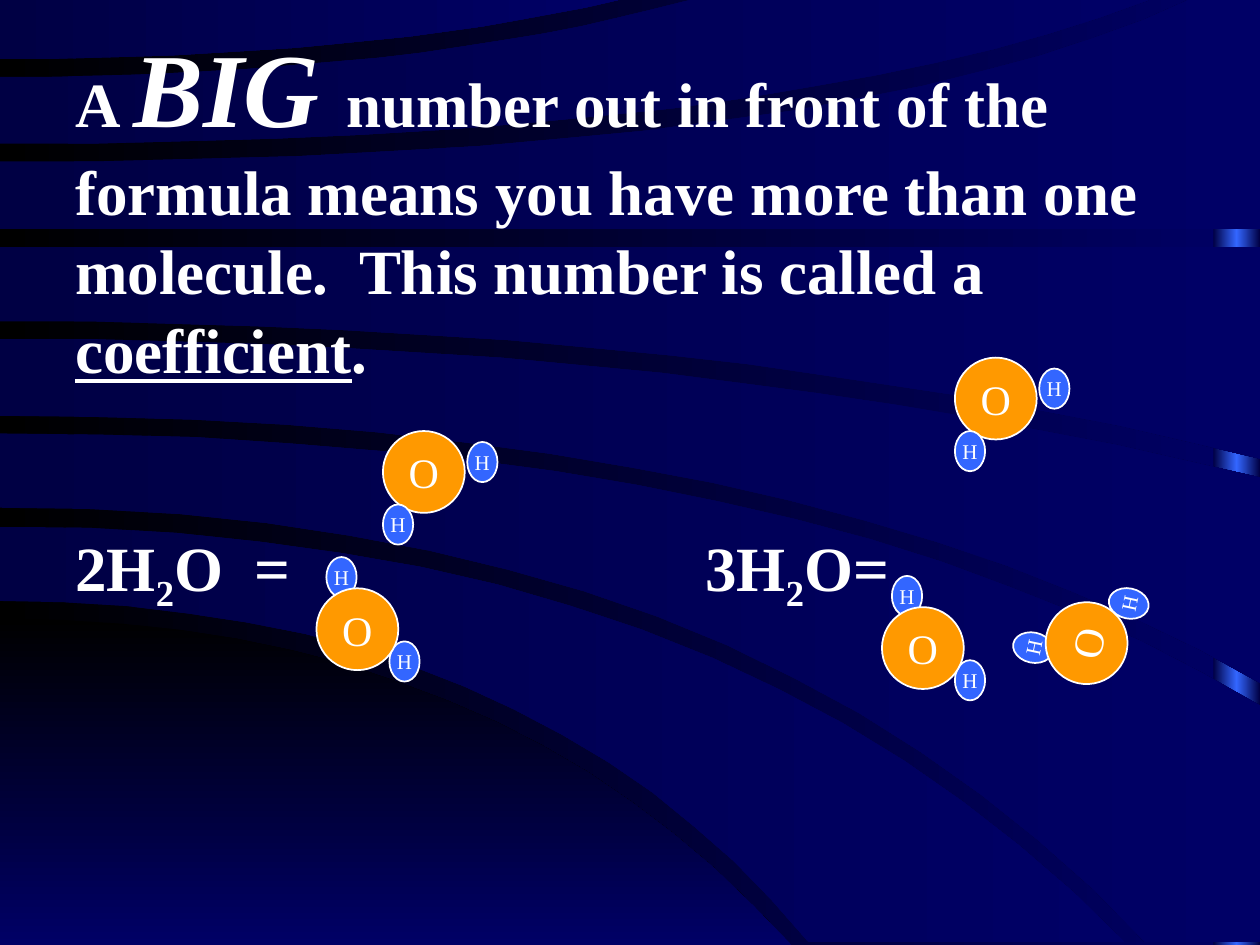
from copy import deepcopy
from dataclasses import dataclass

from pptx import Presentation
from pptx.dml.color import RGBColor
from pptx.enum.shapes import MSO_SHAPE
from pptx.enum.text import MSO_ANCHOR, PP_ALIGN
from pptx.oxml.ns import qn
from pptx.oxml.xmlchemy import OxmlElement
from pptx.util import Cm, Pt

RECTANGLE, OVAL = MSO_SHAPE.RECTANGLE, MSO_SHAPE.OVAL
MIDDLE, CENTER = MSO_ANCHOR.MIDDLE, PP_ALIGN.CENTER
FONT = "Times New Roman"
COLORS = {
    "black": "000000", "navy": "000066", "dark navy": "000044",
    "blue": "3366FF", "orange": "FF9900", "white": "FFFFFF",
}
GRID = Cm(2.54) / 100  # unit of the band outlines
CURVE_STEPS = 16
OXYGEN_SIZE = (1.65, 1.65)
HYDROGEN_SIZE = (0.61, 0.81)


@dataclass
class Edge:
    """A curve that leaves the left side horizontally and bends to its end."""
    start_y: int
    bend_x: int
    end_x: int
    end_y: int

    def points(self) -> list[tuple[float, float]]:
        steps = [step / CURVE_STEPS for step in range(CURVE_STEPS + 1)]
        return [(2 * t * (1 - t) * self.bend_x + t * t * self.end_x,
                 self.start_y + t * t * (self.end_y - self.start_y)) for t in steps]


@dataclass
class Band:
    upper: Edge
    lower: Edge
    colors: tuple[str, ...] = ("dark navy", "navy")
    angle: int = 0


@dataclass
class Molecule:
    left: float
    top: float
    hydrogens: tuple[tuple[float, float], ...]  # offsets from the oxygen
    oxygen_first: bool = False
    rotation: int = 0


# Background bands, from the bottom corner upwards
BANDS = [
    Band(Edge(491, 396, 628, 750), Edge(750, 314, 628, 750), ("black", "navy"), 270),
    Band(Edge(418, 574, 893, 748), Edge(477, 417, 642, 748)),
    Band(Edge(344, 640, 1000, 560), Edge(403, 587, 909, 748)),
    Band(Edge(269, 550, 1000, 379), Edge(330, 630, 1000, 542)),
    Band(Edge(196, 500, 1000, 196), Edge(255, 564, 1000, 364)),
    Band(Edge(128, 669, 943, 0), Edge(182, 500, 1000, 182)),
    Band(Edge(61, 326, 548, 0), Edge(114, 612, 912, 0)),
    Band(Edge(0, 246, 491, 0), Edge(47, 284, 491, 0)),
]
RIGHT_BEND = ((0, 1.48), (1.7, 0.22))
LEFT_BEND = ((0.2, -0.63), (1.47, 1.07))
TURNED_BEND = ((-0.56, 0.51), (1.37, -0.38))
MOLECULES = [
    Molecule(7.72, 8.69, RIGHT_BEND, oxygen_first=True),
    Molecule(6.38, 11.86, LEFT_BEND),
    Molecule(19.25, 7.21, RIGHT_BEND, oxygen_first=True),
    Molecule(17.78, 12.24, LEFT_BEND),
    Molecule(21.08, 12.14, TURNED_BEND, rotation=282),
]


def rgb(name: str) -> RGBColor:
    return RGBColor.from_string(COLORS[name])


def set_gradient(fill, colors: tuple[str, ...], angle: int = 0) -> None:
    """Spread the colours evenly over the stops of a gradient fill."""
    fill.gradient_angle = angle
    for index, (stop, color) in enumerate(zip(fill.gradient_stops, colors)):
        stop.color.rgb = rgb(color)
        stop.position = index / (len(colors) - 1)


def add_text(paragraph, text: str, *, size: int = 36, bold: bool = False, italic: bool = False,
             underline: bool = False, baseline: int = 0) -> None:
    run = paragraph.add_run()
    run.text = text
    font = run.font
    font.name, font.size, font.color.rgb = FONT, Pt(size), rgb("white")
    font.bold, font.italic, font.underline = bold, italic, underline
    if baseline:
        run._r.get_or_add_rPr().set("baseline", str(baseline * 1000))


def draw_side_bar(slide) -> None:
    shape = slide.shapes.add_shape(RECTANGLE, Cm(24.46), 0, Cm(0.94), Cm(19.05))
    shape.shadow.inherit = False
    shape.line.fill.background()
    shape.fill.gradient()
    stops = shape._element.spPr.find(".//" + qn("a:gsLst"))
    stops.append(deepcopy(stops[-1]))  # third stop
    set_gradient(shape.fill, ("dark navy", "blue", "dark navy"))


def draw_band(slide, band: Band) -> None:
    shorter, longer = sorted((band.upper, band.lower), key=lambda edge: edge.end_x)
    corner = (longer.end_x, shorter.end_y)
    outline = [*band.upper.points(), corner, *reversed(band.lower.points())]
    builder = slide.shapes.build_freeform(*outline[0], scale=GRID)
    builder.add_line_segments(outline[1:], close=True)
    shape = builder.convert_to_shape()
    shape.shadow.inherit = False
    shape.line.fill.background()
    shape.fill.gradient()
    set_gradient(shape.fill, band.colors, band.angle)


def draw_atom(group, symbol: str, left: float, top: float, rotation: int) -> None:
    is_oxygen = symbol == "O"
    width, height = OXYGEN_SIZE if is_oxygen else HYDROGEN_SIZE
    shape = group.shapes.add_shape(OVAL, Cm(left), Cm(top), Cm(width), Cm(height))
    shape.shadow.inherit = False
    shape.rotation = rotation
    shape.fill.solid()
    shape.fill.fore_color.rgb = rgb("orange" if is_oxygen else "blue")
    shape.line.color.rgb = rgb("white")
    shape.line.width = Pt(1)
    frame = shape.text_frame
    frame.word_wrap = False
    frame.vertical_anchor = MIDDLE
    frame.paragraphs[0].alignment = CENTER
    add_text(frame.paragraphs[0], symbol, size=24 if is_oxygen else 12)


def draw_molecule(slide, molecule: Molecule) -> None:
    atoms = [("H", molecule.left + x, molecule.top + y) for x, y in molecule.hydrogens]
    atoms.insert(0 if molecule.oxygen_first else len(atoms), ("O", molecule.left, molecule.top))
    group = slide.shapes.add_group_shape()
    for symbol, left, top in atoms:
        draw_atom(group, symbol, left, top, molecule.rotation)


def draw_explanation(slide) -> None:
    frame = slide.shapes.add_textbox(Cm(1.27), Cm(0.2), Cm(23.06), Cm(12.07)).text_frame
    frame.word_wrap = True
    statement, formulas = frame.paragraphs[0], frame.add_paragraph()
    statement.line_spacing = formulas.line_spacing = 1.05

    add_text(statement, "A ", bold=True)
    add_text(statement, "BIG ", size=60, bold=True, italic=True)
    add_text(statement, "number out in front of the formula means you have more than one "
             "molecule.  This number is called a ", bold=True)
    add_text(statement, "coefficient", bold=True, underline=True)
    add_text(statement, ".", bold=True)

    # Two formulas on one line, the second at a tab stop
    formulas.space_before = Pt(78.5)
    tabs = OxmlElement("a:tabLst")
    tab = OxmlElement("a:tab")
    tab.set("pos", str(Cm(12.7)))
    tab.set("algn", "l")
    tabs.append(tab)
    formulas._p.get_or_add_pPr().append(tabs)
    for text, baseline in (("2H", 0), ("2", -25), ("O  = \t3H", 0), ("2", -25), ("O=", 0)):
        add_text(formulas, text, bold=True, baseline=baseline)


def main() -> None:
    presentation = Presentation()
    presentation.slide_width, presentation.slide_height = Cm(25.4), Cm(19.05)
    slide = presentation.slides.add_slide(presentation.slide_layouts[6])

    # Background
    background = slide.background.fill
    background.gradient()
    set_gradient(background, ("black", "navy"))
    draw_side_bar(slide)
    for band in BANDS:
        draw_band(slide, band)

    # Text and molecules
    draw_explanation(slide)
    for molecule in MOLECULES:
        draw_molecule(slide, molecule)
    presentation.save("out.pptx")


if __name__ == "__main__":
    main()
